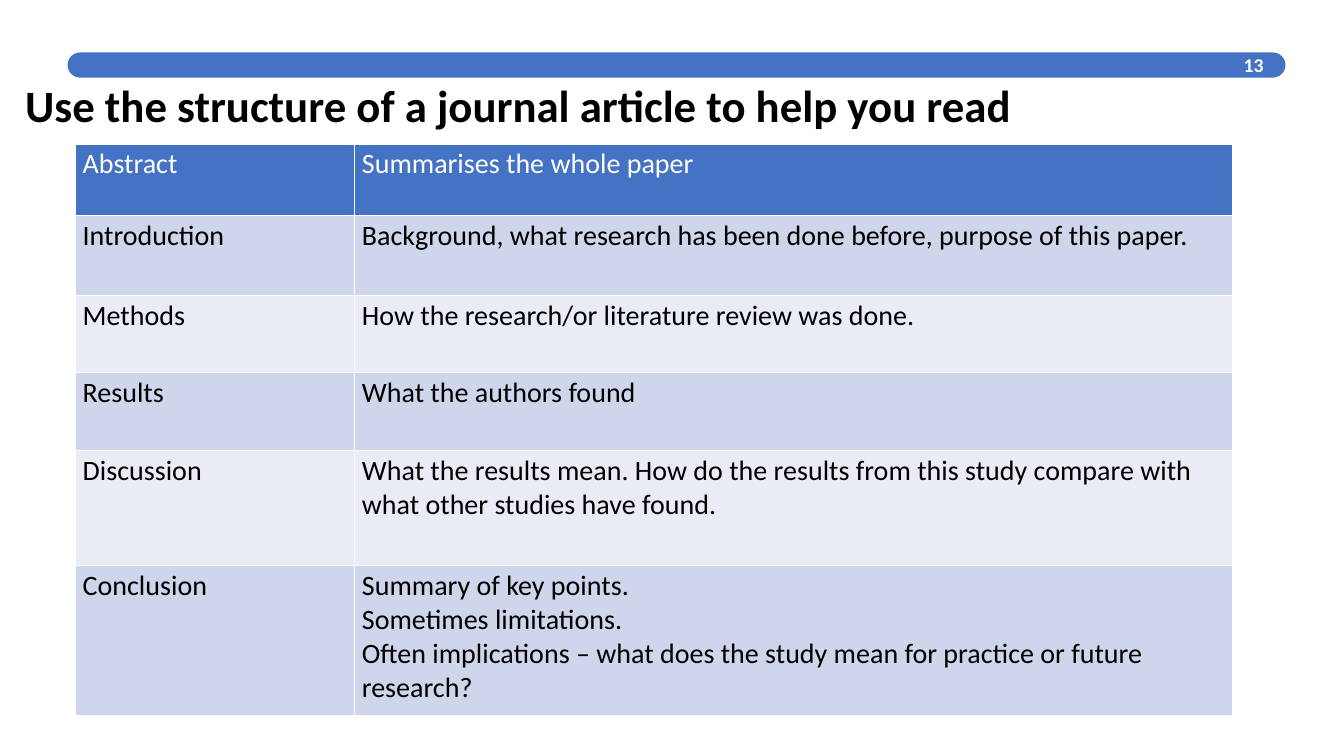
from lxml.etree import SubElement
from pptx import Presentation
from pptx.dml.color import RGBColor
from pptx.enum.shapes import MSO_SHAPE as Shape
from pptx.enum.text import MSO_ANCHOR as Anchor, PP_ALIGN as Align
from pptx.oxml.ns import qn
from pptx.util import Inches, Pt

TITLE = "Use the structure of a journal article to help you read"
PAGE_NUMBER = "13"
SECTIONS = [
    ("Abstract", ["Summarises the whole paper"]),
    ("Introduction", ["Background, what research has been done before, purpose of this paper."]),
    ("Methods", ["How the research/or literature review was done."]),
    ("Results", ["What the authors found"]),
    ("Discussion", ["What the results mean. How do the results from this study compare "
                    "with what other studies have found."]),
    ("Conclusion", ["Summary of key points.",
                    "Sometimes limitations.",
                    "Often implications – what does the study mean for practice or future research?"]),
]
COLUMN_WIDTHS = [2.77, 8.71]
ROW_HEIGHTS = [0.71, 0.79, 0.77, 0.77, 1.14, 1.49]
COLORS = {"blue": "4472C4", "dark_band": "CFD5EA", "light_band": "E9EBF5",
          "white": "FFFFFF", "black": "000000"}
BAR_TOP, BAR_HEIGHT = 0.52, 0.25


def color(name):
    return RGBColor.from_string(COLORS[name])


def set_all(target, values):
    for name, value in values.items():
        setattr(target, name, value)


def write(frame, lines, size, color_name, bold=False, align=Align.LEFT):
    frame.text = "\n".join(lines)
    for paragraph in frame.paragraphs:
        paragraph.alignment = align
        for run in paragraph.runs:
            set_all(run.font, {"name": "Calibri", "size": Pt(size), "bold": bold})
            run.font.color.rgb = color(color_name)


def fill(target, color_name):
    target.fill.solid()
    target.fill.fore_color.rgb = color(color_name)


def add_borders(cell, color_name, width):
    properties = cell._tc.get_or_add_tcPr()
    for position, side in enumerate(("lnL", "lnR", "lnT", "lnB")):
        line = SubElement(properties, qn(f"a:{side}"), w=str(Pt(width)))
        solid = SubElement(line, qn("a:solidFill"))
        SubElement(solid, qn("a:srgbClr"), val=COLORS[color_name])
        properties.insert(position, line)  # borders come before the fill


def add_header(slide):
    # Rounded bar
    bar = slide.shapes.add_shape(Shape.ROUNDED_RECTANGLE, Inches(0.67), Inches(BAR_TOP),
                                 Inches(12.08), Inches(BAR_HEIGHT))
    bar.adjustments[0] = 0.5
    bar.shadow.inherit = False
    fill(bar, "blue")
    bar.line.fill.background()

    # Title
    title = slide.shapes.title
    set_all(title, {"left": Inches(0.25), "top": Inches(0.83),
                    "width": Inches(11.97), "height": Inches(0.6)})
    set_all(title.text_frame, {"margin_left": 0, "margin_top": 0, "margin_right": 0,
                               "margin_bottom": 0, "vertical_anchor": Anchor.TOP,
                               "word_wrap": True})
    write(title.text_frame, [TITLE], 32, "black", bold=True)
    title.text_frame.paragraphs[0].line_spacing = Pt(34.1)

    # Page number
    number = slide.shapes.add_textbox(Inches(12.01), Inches(BAR_TOP),
                                      Inches(0.62), Inches(BAR_HEIGHT))
    set_all(number.text_frame, {"word_wrap": True, "vertical_anchor": Anchor.MIDDLE})
    write(number.text_frame, [PAGE_NUMBER], 14, "white", bold=True, align=Align.RIGHT)


def add_section_table(slide):
    table = slide.shapes.add_table(len(SECTIONS), len(COLUMN_WIDTHS), Inches(0.75), Inches(1.43),
                                   Inches(sum(COLUMN_WIDTHS)), Inches(sum(ROW_HEIGHTS))).table
    set_all(table, {"first_row": False, "horz_banding": False})
    for column, width in zip(table.columns, COLUMN_WIDTHS):
        column.width = Inches(width)
    for index, (row, height, (name, lines)) in enumerate(zip(table.rows, ROW_HEIGHTS, SECTIONS)):
        row.height = Inches(height)
        band = "blue" if index == 0 else ("light_band", "dark_band")[index % 2]
        for cell, text in zip(row.cells, ([name], lines)):
            set_all(cell, {"margin_left": Inches(0.07), "margin_right": Inches(0.07),
                           "margin_top": Inches(0.03), "margin_bottom": Inches(0.03)})
            write(cell.text_frame, text, 20, "white" if index == 0 else "black")
            fill(cell, band)
            add_borders(cell, "white", 1)


def main():
    presentation = Presentation()
    set_all(presentation, {"slide_width": Inches(13.33), "slide_height": Inches(7.5)})
    slide = presentation.slides.add_slide(presentation.slide_layouts[5])
    add_header(slide)
    add_section_table(slide)
    presentation.save("out.pptx")


if __name__ == "__main__":
    main()
